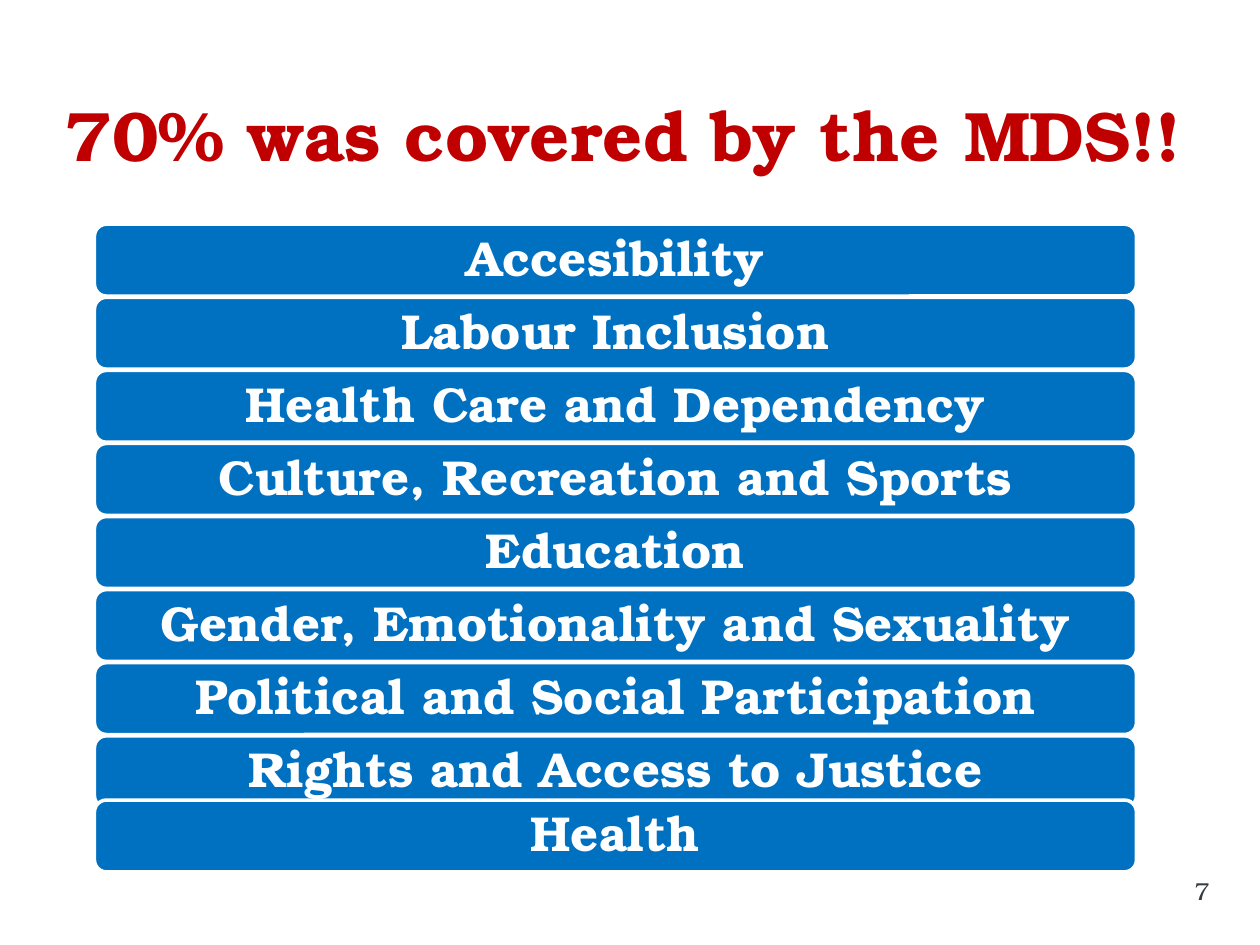
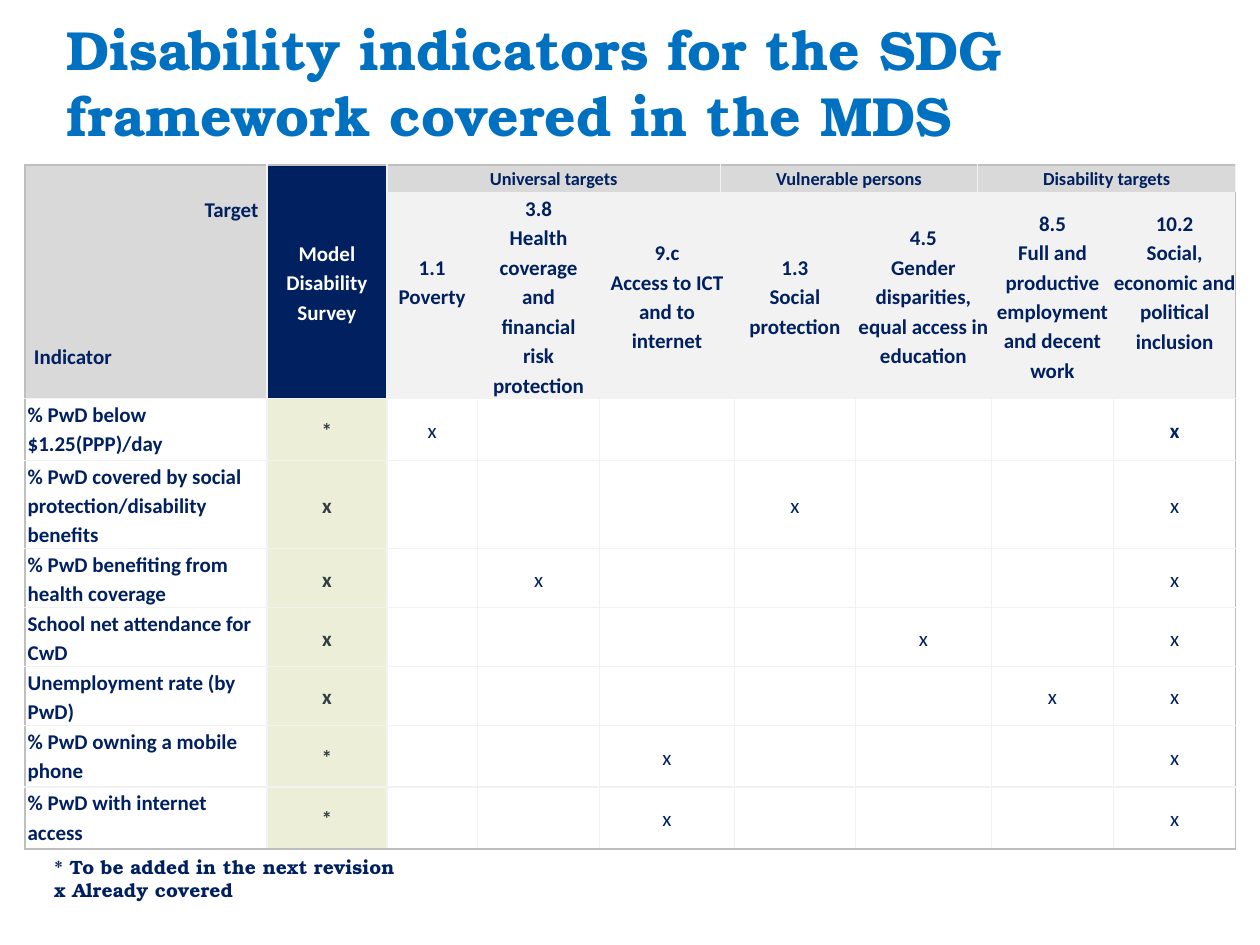
from lxml import etree
from pptx import Presentation
from pptx.dml.color import RGBColor
from pptx.enum import shapes, text
from pptx.oxml.ns import qn
from pptx.util import Inches, Pt

WHITE = RGBColor(0xFF, 0xFF, 0xFF)
RED = RGBColor(0xC0, 0x00, 0x00)
BLUE = RGBColor(0x00, 0x70, 0xC0)
NAVY = RGBColor(0x00, 0x20, 0x60)
SLATE = RGBColor(0x32, 0x3D, 0x43)
GREEN = RGBColor(0xEC, 0xEE, 0xD8)
GREY = RGBColor(0xD9, 0xD9, 0xD9)
PALE = RGBColor(0xF2, 0xF2, 0xF2)
EDGE = RGBColor(0xBF, 0xBF, 0xBF)
SERIF, SANS = "TeX Gyre Bonum", "Calibri"
LEFT, CENTER, RIGHT = (text.PP_ALIGN.LEFT, text.PP_ALIGN.CENTER,
                       text.PP_ALIGN.RIGHT)
TOP, MIDDLE = text.MSO_ANCHOR.TOP, text.MSO_ANCHOR.MIDDLE
SIDES = ("margin_left", "margin_top", "margin_right", "margin_bottom")

TOPICS = ["Accesibility", "Labour Inclusion", "Health Care and Dependency",
          "Culture, Recreation and Sports", "Education",
          "Gender, Emotionality and Sexuality",
          "Political and Social Participation",
          "Rights and Access to Justice", "Health"]

COL_WIDTHS = [1.92, 0.95, 0.72, 0.97, 0.96, 0.11, 0.96, 0.97, 0.11, 0.97, 0.97]
ROW_HEIGHTS = [0.22, 1.37, 0.49, 0.45, 0.45, 0.44, 0.41, 0.49, 0.49]
GROUPS = {2: "Universal targets", 5: "Vulnerable persons",
          8: "Disability targets"}
# column: (number, target, side margin, bottom margin)
TARGETS = {
    2: ("1.1", "Poverty", 0, 0.23),
    3: ("3.8", "Health coverage and financial risk protection", 0.07, 0),
    4: ("9.c", "Access to ICT and to internet", 0.07, 0),
    6: ("1.3", "Social protection", 0, 0),
    7: ("4.5", "Gender disparities, equal access in education", 0, 0),
    9: ("8.5", "Full and productive employment and decent work", 0, 0),
    10: ("10.2", "Social, economic and political inclusion", 0, 0.23),
}
LAST_COL, LAST_ROW = len(COL_WIDTHS) - 1, len(ROW_HEIGHTS) - 1
WIDE_COLS = (4, 7)
# indicator, mark in the survey column, column of its own target
INDICATORS = [
    ("% PwD below $1.25(PPP)/day", "*", 2),
    ("% PwD covered by social protection/disability benefits", "x", 6),
    ("% PwD benefiting from health coverage", "x", 3),
    ("School net attendance for CwD", "x", 7),
    ("Unemployment rate (by PwD)", "x", 9),
    ("% PwD owning a mobile phone", "*", 4),
    ("% PwD with internet access", "*", 4),
]


class Deck:
    def __init__(self):
        self.prs = Presentation()
        self.prs.slide_width, self.prs.slide_height = Inches(10), Inches(7.5)
        self.slide = None

    def add_slide(self):
        self.slide = self.prs.slides.add_slide(self.prs.slide_layouts[5])

    def add_lines(self, tf, lines, size, color, bold=True, font=SERIF,
                  align=LEFT, spacing=None):
        for i, line in enumerate(lines):
            p = tf.paragraphs[0] if i == 0 else tf.add_paragraph()
            p.alignment = align
            if spacing:
                p.line_spacing = spacing
            r = p.add_run()
            r.text = line
            style = {"name": font, "size": Pt(size), "bold": bold}
            for key, value in style.items():
                setattr(r.font, key, value)
            r.font.color.rgb = color

    def frame(self, tf, margins, anchor=TOP):
        style = {"word_wrap": True, "auto_size": text.MSO_AUTO_SIZE.NONE,
                 "vertical_anchor": anchor}
        style.update(zip(SIDES, map(Inches, margins)))
        for key, value in style.items():
            setattr(tf, key, value)

    def title(self, line, box, size, color, align, margins, anchor):
        sp = self.slide.shapes.title
        sp.left, sp.top, sp.width, sp.height = map(Inches, box)
        self.frame(sp.text_frame, margins, anchor)
        self.add_lines(sp.text_frame, [line], size, color, align=align)

    def label(self, lines, box, size, color, margins, **style):
        sp = self.slide.shapes.add_textbox(*map(Inches, box))
        self.frame(sp.text_frame, margins)
        self.add_lines(sp.text_frame, lines, size, color, **style)

    def bar(self, line, box):
        sp = self.slide.shapes.add_shape(
            shapes.MSO_SHAPE.ROUNDED_RECTANGLE, *map(Inches, box))
        sp.shadow.inherit = False
        sp.fill.solid()
        sp.fill.fore_color.rgb = BLUE
        sp.line.color.rgb = WHITE
        sp.line.width = Pt(2)
        self.frame(sp.text_frame, (0.12, 0, 0.12, 0), MIDDLE)
        self.add_lines(sp.text_frame, [line], 28, WHITE, align=CENTER,
                       spacing=0.9)

    def table(self, left, top, widths, heights):
        tbl = self.slide.shapes.add_table(
            len(heights), len(widths), Inches(left), Inches(top),
            Inches(sum(widths)), Inches(sum(heights))).table
        for col, width in zip(tbl.columns, widths):
            col.width = Inches(width)
        for row, height in zip(tbl.rows, heights):
            row.height = Inches(height)
        return tbl

    def cell(self, cell, lines=(), margins=(0, 0, 0, 0), anchor=MIDDLE,
             size=12, color=NAVY, bold=True, align=CENTER):
        for side, value in zip(SIDES, margins):
            setattr(cell, side, Inches(value))
        cell.vertical_anchor = anchor
        self.add_lines(cell.text_frame, lines, size, color, bold, SANS, align,
                       1.15)

    def paint(self, cell, fill, edges):
        """Draw the four borders, then the fill; edges maps a side to a colour."""
        tc_pr = cell._tc.get_or_add_tcPr()
        for side in "LRTB":
            ln = etree.SubElement(tc_pr, qn(f"a:ln{side}"), w=str(Pt(1)))
            solid = etree.SubElement(ln, qn("a:solidFill"))
            etree.SubElement(solid, qn("a:srgbClr"),
                             val=str(edges.get(side, PALE)))
        cell.fill.solid()
        cell.fill.fore_color.rgb = fill


def cell_fill(row, col):
    if col == 1:
        return NAVY if row < 2 else GREEN
    if row > 1:
        return WHITE
    return GREY if row == 0 or col == 0 else PALE


def outer_edges(row, col):
    on_edge = {"L": col == 0, "R": col == LAST_COL,
               "T": row == 0, "B": row == LAST_ROW}
    return {side: EDGE for side, hit in on_edge.items() if hit}


def topics_slide(deck):
    deck.add_slide()
    deck.title("70% was covered by the MDS!!", (0, 0.68, 10, 0.71), 40, RED,
               CENTER, (0, 0.05, 0.1, 0.05), TOP)
    deck.label(["7"], (7.52, 6.9, 2.08, 0.5), 14, SLATE,
               (0.1, 0.05, 0, 0.05), bold=False, align=RIGHT)
    last_top = 6.35
    for i, topic in enumerate(TOPICS):
        deck.bar(topic, (0.75, min(1.78 + 0.58 * i, last_top), 8.27, 0.57))


def indicators_slide(deck):
    deck.add_slide()
    deck.title("Disability indicators for the SDG framework covered in the MDS",
               (0.43, 0.13, 9.29, 1.03), 31.5, BLUE, LEFT,
               (0.1, 0.05, 0.1, 0.05), MIDDLE)
    tbl = deck.table(0.2, 1.31, COL_WIDTHS, ROW_HEIGHTS)
    for row in range(LAST_ROW + 1):
        for col in range(LAST_COL + 1):
            deck.paint(tbl.cell(row, col), cell_fill(row, col),
                       outer_edges(row, col))
    for col in (0, 1):
        tbl.cell(0, col).merge(tbl.cell(1, col))
    for col in GROUPS:
        tbl.cell(0, col).merge(tbl.cell(0, col + 2))
    for row in range(1, LAST_ROW + 1):
        for col in WIDE_COLS:
            tbl.cell(row, col).merge(tbl.cell(row, col + 1))

    side = (0.07, 0, 0.07, 0)
    corner = tbl.cell(0, 0)
    deck.cell(corner, ["Target", "Indicator"], (0.07, 0.23, 0.07, 0), TOP)
    target, indicator = corner.text_frame.paragraphs
    target.alignment, indicator.alignment = RIGHT, LEFT
    indicator.space_before = Pt(67)
    deck.cell(tbl.cell(0, 1), ["Model", "Disability Survey"], side, color=WHITE)
    for col, group in GROUPS.items():
        deck.cell(tbl.cell(0, col), [group], anchor=TOP, size=10.5)
    for col, (number, name, pad, bottom) in TARGETS.items():
        deck.cell(tbl.cell(1, col), [number, name], (pad, 0, pad, bottom))

    for row, (name, survey, own_col) in enumerate(INDICATORS, 2):
        deck.cell(tbl.cell(row, 0), [name], (0.02, 0, 0.02, 0), TOP, align=LEFT)
        deck.cell(tbl.cell(row, 1), [survey], side, color=SLATE)
        for col in TARGETS:
            marks = ["x"] if col in (own_col, LAST_COL) else []
            deck.cell(tbl.cell(row, col), marks, side,
                      bold=(row, col) == (2, LAST_COL))

    deck.label(["* To be added in the next revision", "x Already covered"],
               (0.43, 6.74, 9.29, 0.55), 11, NAVY, (0, 0.05, 0.1, 0.05))


def main():
    deck = Deck()
    topics_slide(deck)
    indicators_slide(deck)
    deck.prs.save("out.pptx")


if __name__ == "__main__":
    main()
